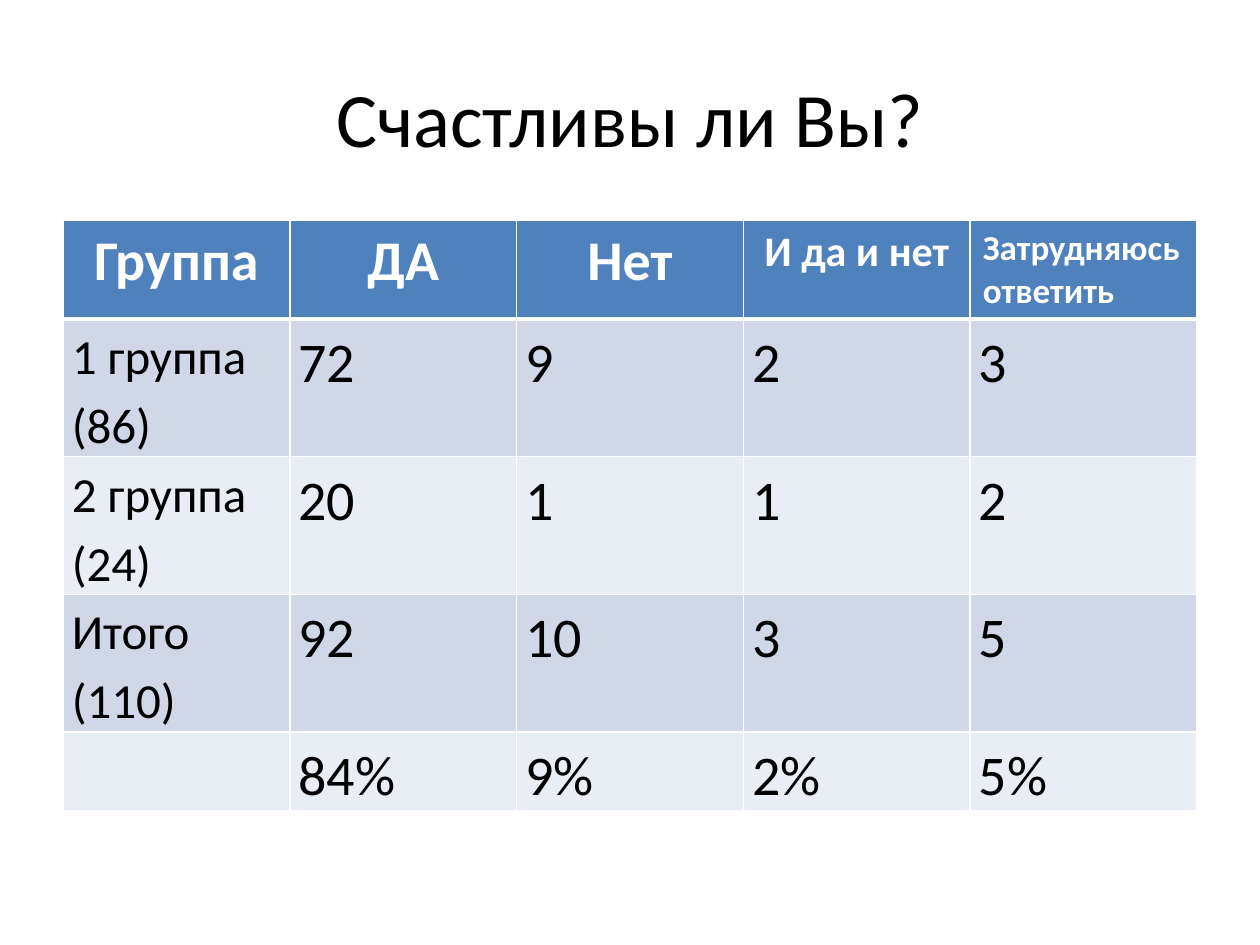
from dataclasses import dataclass

from lxml.etree import SubElement
from pptx import Presentation
from pptx.dml.color import RGBColor as Rgb
from pptx.enum.text import MSO_ANCHOR as Anchor, PP_ALIGN as Align
from pptx.oxml.ns import qn
from pptx.util import Inches, Pt


@dataclass(frozen=True)
class Theme:
    font: str = "Calibri"
    ink: str = "000000"
    paper: str = "FFFFFF"
    header: str = "4F81BD"
    bands: tuple = ("D0D8E8", "E9EDF4")
    title_size: int = 44
    group_size: int = 28
    value_size: int = 32


THEME = Theme()
HEADINGS = [
    ("Группа", 32, Align.CENTER),
    ("ДА", 32, Align.CENTER),
    ("Нет", 32, Align.CENTER),
    ("И да и нет", 24, Align.CENTER),
    ("Затрудняюсь ответить", 20, Align.LEFT),
]
ANSWERS = [
    ("1 группа (86)", "72", "9", "2", "3"),
    ("2 группа (24)", "20", "1", "1", "2"),
    ("Итого (110)", "92", "10", "3", "5"),
    ("", "84%", "9%", "2%", "5%"),
]
ROW_HEIGHTS = [0.78, 1.09, 1.09, 1.09, 0.62]


def style_paragraph(paragraph, size, color, align, bold=False):
    paragraph.alignment = align
    font = paragraph.font
    font.name, font.size, font.bold = THEME.font, Pt(size), bold
    font.color.rgb = Rgb.from_string(color)


def add_title(slide, text):
    title = slide.shapes.title
    title.left, title.top = Inches(0.5), Inches(0.3)
    title.width, title.height = Inches(9), Inches(1.25)
    title.text_frame.text = text
    title.text_frame.vertical_anchor = Anchor.MIDDLE
    style_paragraph(title.text_frame.paragraphs[0], THEME.title_size, THEME.ink, Align.CENTER)


def set_borders(cell, top=1, bottom=1):
    properties = cell._tc.get_or_add_tcPr()
    for side, width in (("L", 1), ("R", 1), ("T", top), ("B", bottom)):
        border = SubElement(properties, qn(f"a:ln{side}"), w=str(Pt(width)))
        fill = SubElement(border, qn("a:solidFill"))
        SubElement(fill, qn("a:srgbClr"), val=THEME.paper)


def fill_cell(cell, color):
    cell.fill.solid()
    cell.fill.fore_color.rgb = Rgb.from_string(color)


def write_heading(cell, text, size, align):
    set_borders(cell, bottom=3)
    fill_cell(cell, THEME.header)
    cell.text = text
    style_paragraph(cell.text_frame.paragraphs[0], size, THEME.paper, align, bold=True)


def write_answer(cell, text, size, band, top):
    set_borders(cell, top=top)
    fill_cell(cell, band)
    if not text:
        return
    cell.margin_left = cell.margin_right = Inches(0.07)
    cell.margin_top = cell.margin_bottom = 0
    cell.text = text
    paragraph = cell.text_frame.paragraphs[0]
    style_paragraph(paragraph, size, THEME.ink, Align.LEFT)
    paragraph.line_spacing = 1.15
    paragraph.space_after = Pt(10)


def add_survey_table(slide):
    table = slide.shapes.add_table(
        len(ROW_HEIGHTS), len(HEADINGS),
        Inches(0.5), Inches(1.75), Inches(9), Inches(sum(ROW_HEIGHTS)),
    ).table
    for row, height in zip(table.rows, ROW_HEIGHTS):
        row.height = Inches(height)
    for column, heading in enumerate(HEADINGS):
        write_heading(table.cell(0, column), *heading)
    for row, answers in enumerate(ANSWERS, start=1):
        band = THEME.bands[(row - 1) % 2]
        top = 3 if row == 1 else 1
        for column, text in enumerate(answers):
            size = THEME.value_size if column else THEME.group_size
            write_answer(table.cell(row, column), text, size, band, top)


def main():
    deck = Presentation()
    deck.slide_width, deck.slide_height = Inches(10), Inches(7.5)
    slide = deck.slides.add_slide(deck.slide_layouts[5])
    add_title(slide, "Счастливы ли Вы?")
    add_survey_table(slide)
    deck.save("out.pptx")


if __name__ == "__main__":
    main()
